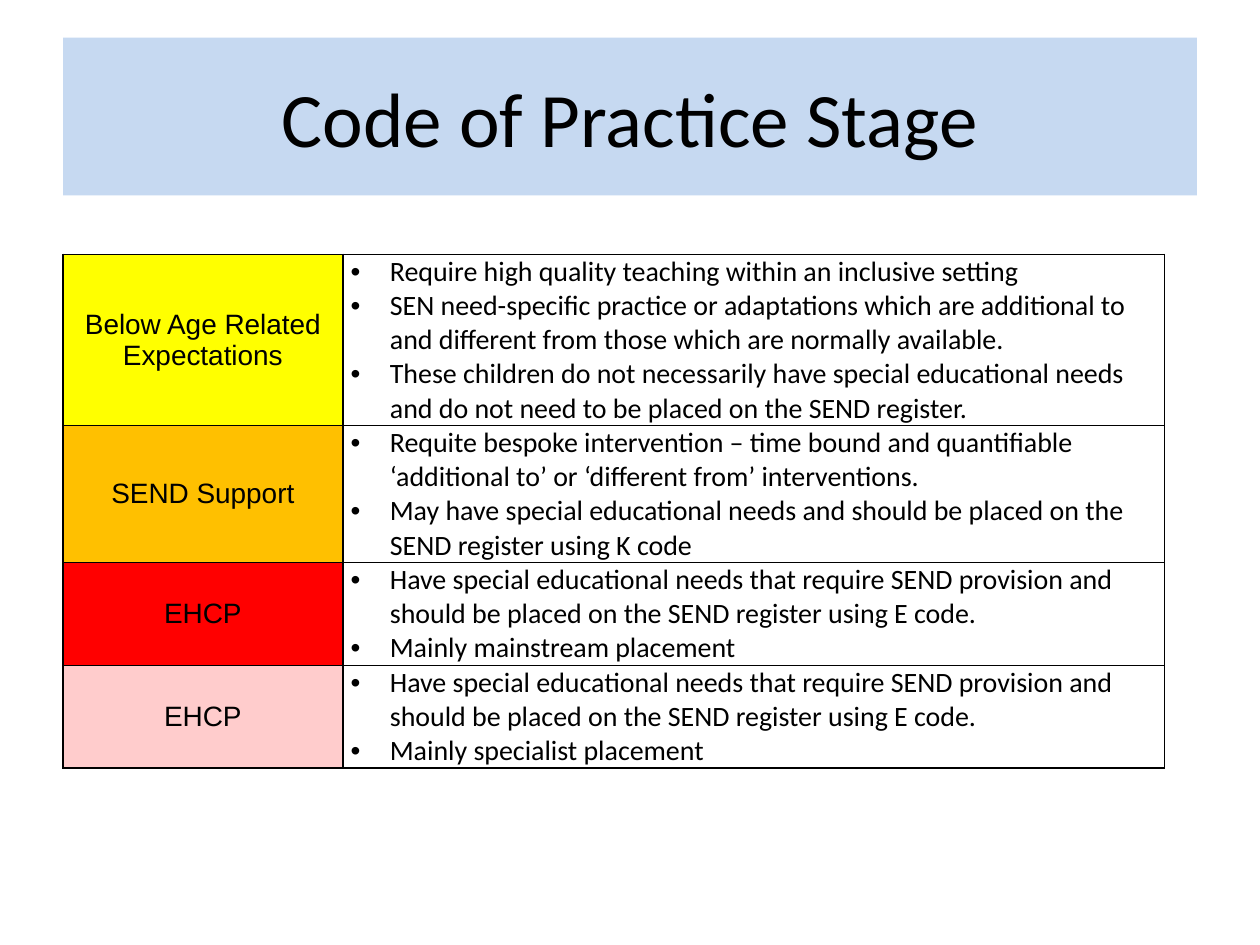
from dataclasses import dataclass
from lxml.etree import SubElement as Sub
from pptx import Presentation
from pptx.dml.color import RGBColor as Rgb
from pptx.enum.text import MSO_ANCHOR as Anchor, PP_ALIGN as Align
from pptx.oxml.ns import qn
from pptx.util import Cm, Pt


@dataclass(frozen=True)
class Theme:
    ink: str = "000000"
    band: str = "C6D9F1"
    below: str = "FFFF00"
    support: str = "FFC000"
    main: str = "FF0000"
    special: str = "FFCCCC"
    head: int = 44
    body: int = 16
    sans: str = "Arial"
    text: str = "Calibri"
    line: int = 1


look = Theme()
plan = ("Have special educational needs that require SEND provision and "
        "should be placed on the SEND register using E code.")
stages = [
    ("Below Age Related Expectations", look.below, 2.75, [
        "Require high quality teaching within an inclusive setting",
        "SEN need-specific practice or adaptations which are additional to "
        "and different from those which are normally available.",
        "These children do not necessarily have special educational needs "
        "and do not need to be placed on the SEND register."]),
    ("SEND Support", look.support, 2, [
        "Requite bespoke intervention – time bound and quantifiable "
        "‘additional to’ or ‘different from’ interventions.",
        "May have special educational needs and should be placed on the "
        "SEND register using K code"]),
    ("EHCP", look.main, 2, [plan, "Mainly mainstream placement"]),
    ("EHCP", look.special, 2, [plan, "Mainly specialist placement"]),
]


def assign(item, form):
    for key, value in form.items():
        setattr(item, key, value)


def style(para, face, size):
    assign(para.font, {"name": face, "size": Pt(size), "bold": False})
    para.font.color.rgb = Rgb.from_string(look.ink)


def paint(item, color):
    item.fill.solid()
    item.fill.fore_color.rgb = Rgb.from_string(color)


def bullet(para):
    props = para._p.get_or_add_pPr()
    props.set("marL", str(Cm(0.79)))
    props.set("indent", str(-Cm(0.79)))
    Sub(props, qn("a:buFont"), typeface=look.sans)
    Sub(props, qn("a:buChar"), char="•")


def border(cell):
    props = cell._tc.get_or_add_tcPr()
    for side in ("L", "R", "T", "B"):
        line = Sub(props, qn(f"a:ln{side}"), w=str(Pt(look.line)))
        fill = Sub(line, qn("a:solidFill"))
        Sub(fill, qn("a:srgbClr"), val=look.ink)


def frame(cell):
    border(cell)
    assign(cell, {"vertical_anchor": Anchor.MIDDLE,
                  "margin_left": Cm(0.16), "margin_right": Cm(0.16),
                  "margin_top": 0, "margin_bottom": 0})


def add_title(slide, left, top, width, height):
    title = slide.shapes.title
    assign(title, {"left": Cm(left), "top": Cm(top),
                   "width": Cm(width), "height": Cm(height)})
    paint(title, look.band)
    title.text_frame.text = "Code of Practice Stage"
    title.text_frame.vertical_anchor = Anchor.MIDDLE
    para = title.text_frame.paragraphs[0]
    para.alignment = Align.CENTER
    style(para, look.text, look.head)


def add_label(cell, label, color):
    frame(cell)
    paint(cell, color)
    cell.text = label
    para = cell.text_frame.paragraphs[0]
    para.alignment = Align.CENTER
    style(para, look.sans, look.body)


def add_notes(cell, notes):
    frame(cell)
    cell.fill.background()
    cell.text = "\n".join(notes)
    for para in cell.text_frame.paragraphs:
        bullet(para)
        style(para, look.text, look.body)


def add_stages(slide, left, top, width):
    height = sum(stage[2] for stage in stages)
    table = slide.shapes.add_table(len(stages), 2, Cm(left), Cm(top),
                                   Cm(width), Cm(height)).table
    assign(table, {"first_row": False, "horz_banding": False})
    first = 5.64
    for col, size in zip(table.columns, (first, width - first)):
        col.width = Cm(size)
    for row, (label, color, size, notes) in zip(table.rows, stages):
        row.height = Cm(size)
        add_label(row.cells[0], label, color)
        add_notes(row.cells[1], notes)


def main():
    deck = Presentation()
    assign(deck, {"slide_width": Cm(25.4), "slide_height": Cm(19.05)})
    slide = deck.slides.add_slide(deck.slide_layouts[5])
    add_title(slide, 1.27, 0.76, 22.86, 3.18)
    add_stages(slide, 1.27, 5.13, 22.2)
    deck.save("out.pptx")


if __name__ == "__main__":
    main()
